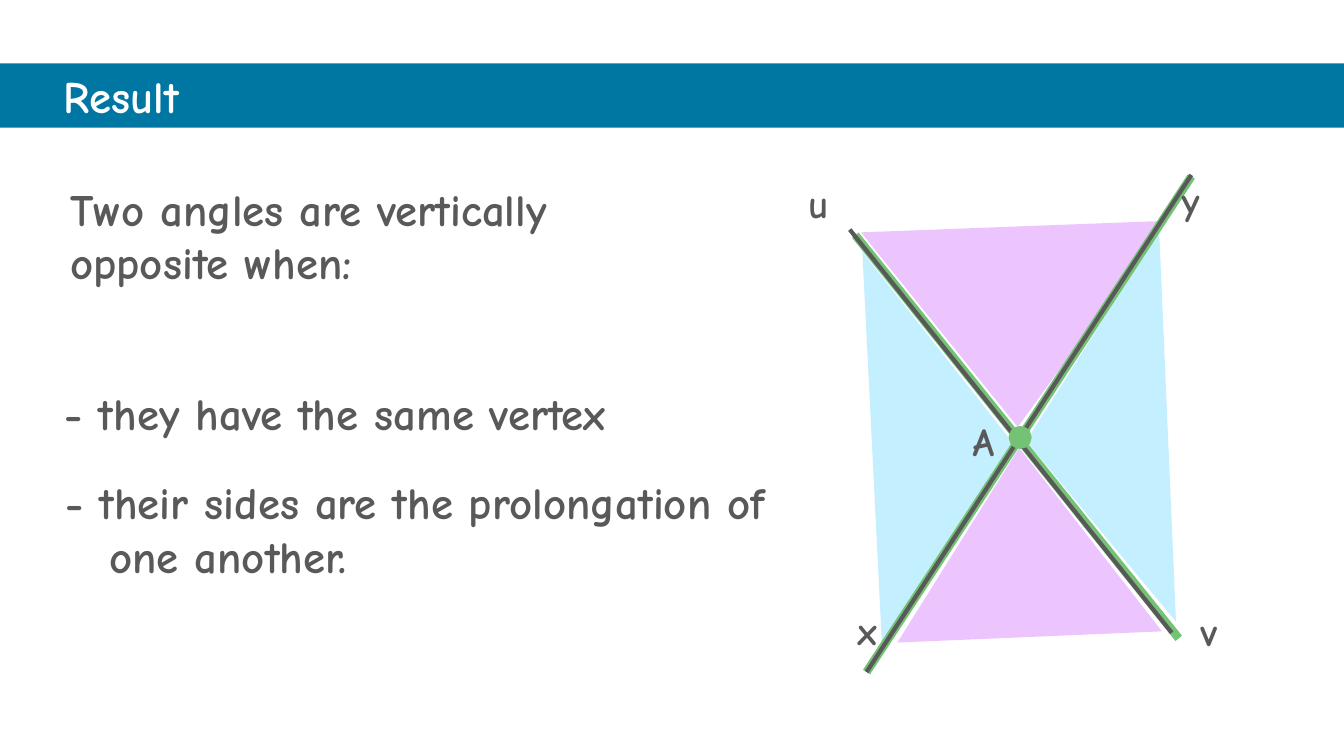
from pptx import Presentation
from pptx.dml.color import RGBColor
from pptx.enum.shapes import MSO_CONNECTOR, MSO_SHAPE
from pptx.enum.text import MSO_ANCHOR, MSO_AUTO_SIZE, PP_ALIGN
from pptx.oxml.ns import qn
from pptx.util import Pt
from lxml.etree import SubElement

FONT = "Comic Neue"
GREY, GREEN, BLUE, WHITE = "595959", "74C274", "0076A3", "FFFFFF"
SKY, LILAC = "C4EFFF", "ECC5FF"

ANGLES = [
    (SKY, [(840, 444), (733, 315), (828, 165)]),
    (LILAC, [(615, 166), (727, 305), (780, 232), (827, 158)]),
    (SKY, [(630, 460), (724, 317), (616, 180)]),
    (LILAC, [(641, 459), (728, 320), (830, 451)]),
]
SIDES = [
    (GREEN, 6, (611, 168), (842, 456)),
    (GREEN, 6, (619, 480), (851, 126)),
    (GREY, 3, (607, 164), (837, 452)),
    (GREY, 3, (851, 125), (619, 480)),
]
LABELS = [("u", 521, 122), ("x", 556, 427), ("A", 639, 292),
          ("y", 787, 120), ("v", 800, 428)]


def paint(form, color):
    """Set a fill, line or font colour from a hex string."""
    if hasattr(form, "solid"):
        form.solid()
        form.fore_color.rgb = RGBColor.from_string(color)
    else:
        form.color.rgb = RGBColor.from_string(color)


def write(shape, *lines, size=32, color=GREY, align=PP_ALIGN.LEFT,
          indent=0, hang=0, spacing=1.0):
    """Write one bold paragraph for each line."""
    frame = shape.text_frame
    frame.word_wrap = True
    frame.auto_size = MSO_AUTO_SIZE.NONE
    frame.vertical_anchor = MSO_ANCHOR.TOP
    frame.text = "\n".join(lines)
    for para in frame.paragraphs:
        props = para._p.get_or_add_pPr()
        props.set("marL", str(Pt(indent)))
        props.set("indent", str(Pt(-hang)))
        para.alignment = align
        para.line_spacing = spacing
        para.font.name = FONT
        para.font.size = Pt(size)
        para.font.bold = True
        paint(para.font, color)


def place(shape, left, top, width, height):
    """Move and size a shape."""
    shape.left, shape.top = Pt(left), Pt(top)
    shape.width, shape.height = Pt(width), Pt(height)


def add_title(slide, text):
    """Turn the title placeholder into a full-width band."""
    title = slide.shapes.title
    place(title, 0, 45.2, 960, 46)
    paint(title.fill, BLUE)
    write(title, text, color=WHITE, indent=38)


def add_text(slide, left, top, width, height, *lines, **form):
    """Add a text box."""
    box = slide.shapes.add_textbox(Pt(left), Pt(top), Pt(width), Pt(height))
    write(box, *lines, **form)


def add_angle(slide, color, points):
    """Add a filled polygon without an outline."""
    pen = slide.shapes.build_freeform(*points[0], scale=Pt(1))
    pen.add_line_segments(points[1:], close=True)
    shape = pen.convert_to_shape()
    shape.shadow.inherit = False
    paint(shape.fill, color)
    shape.line.fill.background()


def add_side(slide, color, width, start, end):
    """Add a straight line between two points."""
    ends = [Pt(value) for value in start + end]
    line = slide.shapes.add_connector(MSO_CONNECTOR.STRAIGHT, *ends)
    paint(line.line, color)
    line.line.width = Pt(width)
    SubElement(line._element.spPr, qn("a:effectLst"))


def add_dot(slide, left, top, size, color):
    """Add a round vertex."""
    dot = slide.shapes.add_shape(MSO_SHAPE.OVAL, Pt(left), Pt(top),
                                 Pt(size), Pt(size))
    dot.shadow.inherit = False
    paint(dot.fill, color)
    paint(dot.line, color)
    dot.line.width = Pt(2)


def main():
    """Build the slide and save it."""
    deck = Presentation()
    deck.slide_width, deck.slide_height = Pt(960), Pt(540)
    slide = deck.slides.add_slide(deck.slide_layouts[5])
    add_title(slide, "Result")
    for angle in ANGLES:
        add_angle(slide, *angle)
    add_text(slide, 7, 126, 480, 85, "Two angles are vertically",
             "opposite when:", indent=36)
    add_text(slide, 3, 272, 517, 46, "- they have the same vertex", indent=36)
    add_text(slide, 3.6, 335.5, 588, 85,
             "- their sides are the prolongation of one another.",
             indent=67.5, hang=31.5)
    for side in SIDES:
        add_side(slide, *side)
    for name, left, top in LABELS:
        add_text(slide, left, top, 127, 74, name, size=28,
                 align=PP_ALIGN.CENTER, spacing=1.07)
    add_dot(slide, 721.5, 305.3, 14.4, GREEN)
    deck.save("out.pptx")


if __name__ == "__main__":
    main()
